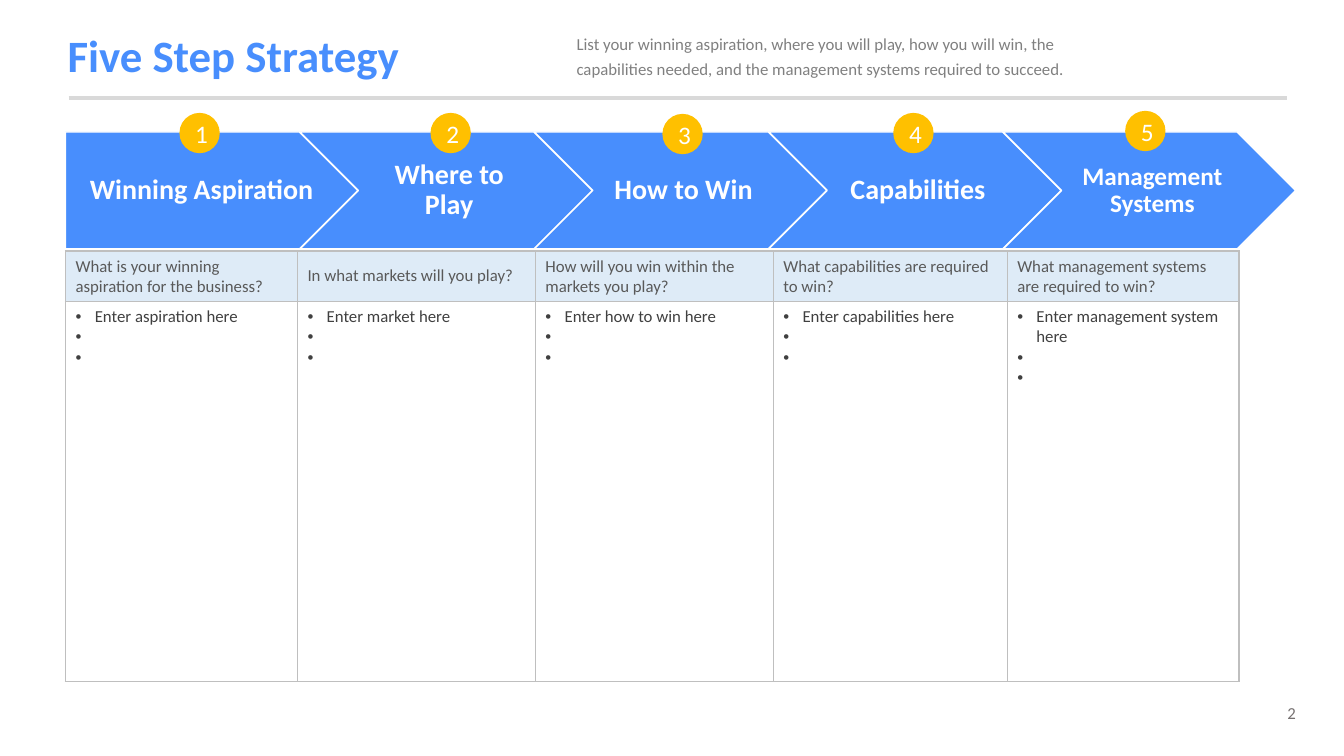
import pptx
import pptx.util
import pptx.dml.color
import pptx.enum.shapes
import pptx.enum.text
import pptx.oxml
import pptx.oxml.ns

Inches = pptx.util.Inches
Pt = pptx.util.Pt
SHAPE = pptx.enum.shapes.MSO_SHAPE
ALIGN = pptx.enum.text.PP_ALIGN
ANCHOR = pptx.enum.text.MSO_ANCHOR

COLORS = {
    "blue": "488EFD", "gold": "FFC000", "white": "FFFFFF", "pale": "DEEBF7",
    "rule": "D9D9D9", "border": "BFBFBF", "hint": "808080",
    "question": "595959", "entry": "404040", "number": "767171",
}
FONT = "Calibri"

# Grid of the five steps, in inches
LEFT = 0.65
STEP_PITCH, STEP_TOP, STEP_WIDTH, STEP_HEIGHT = 2.325, 1.31, 2.9, 1.16
BADGE_SIZE = 0.4
TABLE_TOP = 2.49
COLUMN_WIDTHS = [2.3, 2.36, 2.36, 2.32, 2.3]
ROW_HEIGHTS = [0.5, 3.77]
BULLET_INDENT = 0.19

# Label, label size, badge left and top, question, first entry
STEPS = [
    ("Winning Aspiration", 20, 1.78, 1.12,
     "What is your winning aspiration for the business?", "Enter aspiration here"),
    ("Where to Play", 20, 4.27, 1.12,
     "In what markets will you play?", "Enter market here"),
    ("How to Win", 20, 6.57, 1.13,
     "How will you win within the markets you play?", "Enter how to win here"),
    ("Capabilities", 20, 8.86, 1.12,
     "What capabilities are required to win?", "Enter capabilities here"),
    ("Management Systems", 18, 11.16, 1.1,
     "What management systems are required to win?", "Enter management system here"),
]


def rgb(name):
    return pptx.dml.color.RGBColor.from_string(COLORS[name])


def write(frame, text, size, color, bold=False, align=ALIGN.LEFT, spacing=None):
    frame.text = text
    frame.word_wrap = True
    for para in frame.paragraphs:
        para.alignment = align
        if spacing:
            para.line_spacing = spacing
        for span in para.runs:
            span.font.name = FONT
            span.font.size = Pt(size)
            span.font.bold = bold
            span.font.color.rgb = rgb(color)


def add_text(page, left, top, width, height, text, color, **style):
    box = page.shapes.add_textbox(*map(Inches, (left, top, width, height)))
    write(box.text_frame, text, 12, color, **style)
    return box


def add_filled(page, kind, left, top, width, height, fill, line=None):
    shape = page.shapes.add_shape(kind, *map(Inches, (left, top, width, height)))
    shape.shadow.inherit = False
    shape.fill.solid()
    shape.fill.fore_color.rgb = rgb(fill)
    if line:
        shape.line.color.rgb = rgb(line)
        shape.line.width = Pt(1)
    else:
        shape.line.fill.background()
    shape.text_frame.vertical_anchor = ANCHOR.MIDDLE
    return shape


def add_title(page, text):
    title = page.shapes.title
    title.left, title.top, title.width, title.height = map(Inches, (0.57, 0.19, 10.94, 0.77))
    write(title.text_frame, text, 32, "blue", bold=True, spacing=0.9)
    title.text_frame.vertical_anchor = ANCHOR.MIDDLE


def add_rule(page, left, right, top):
    rule = page.shapes.add_connector(
        pptx.enum.shapes.MSO_CONNECTOR.STRAIGHT, *map(Inches, (left, top, right, top)))
    rule.line.color.rgb = rgb("rule")
    rule.line.width = Pt(3)
    rule._element.spPr.append(pptx.oxml.parse_xml(
        f'<a:effectLst {pptx.oxml.ns.nsdecls("a")}/>'))


def add_step(page, index, label, size):
    kind = SHAPE.CHEVRON if index else SHAPE.PENTAGON
    arrow = add_filled(page, kind, LEFT + index * STEP_PITCH, STEP_TOP,
                       STEP_WIDTH, STEP_HEIGHT, "blue", "white")
    frame = arrow.text_frame
    frame.margin_left = Inches(0.09 if index else 0.12)
    frame.margin_right = Inches(0.03)
    frame.margin_top = frame.margin_bottom = Inches(0.06)
    write(frame, label, size, "white", bold=True, align=ALIGN.CENTER, spacing=0.9)


def add_badge(page, left, top, number):
    badge = add_filled(page, SHAPE.OVAL, left, top, BADGE_SIZE, BADGE_SIZE, "gold")
    write(badge.text_frame, str(number), 18, "white", align=ALIGN.CENTER)


def style_cell(cell, fill):
    cell.fill.solid()
    cell.fill.fore_color.rgb = rgb(fill)
    properties = cell._tc.get_or_add_tcPr()
    for position, side in enumerate("LRTB"):
        properties.insert(position, pptx.oxml.parse_xml(
            f'<a:ln{side} {pptx.oxml.ns.nsdecls("a")} w="{Pt(1)}"><a:solidFill>'
            f'<a:srgbClr val="{COLORS["border"]}"/></a:solidFill></a:ln{side}>'))


def add_bullets(frame):
    for para in frame.paragraphs:
        properties = para._p.get_or_add_pPr()
        properties.set("marL", str(Inches(BULLET_INDENT)))
        properties.set("indent", str(-Inches(BULLET_INDENT)))
        for tag in ('buFont typeface="Arial"', 'buChar char="•"'):
            properties.append(pptx.oxml.parse_xml(
                f'<a:{tag} {pptx.oxml.ns.nsdecls("a")}/>'))


def add_answer_table(page):
    table = page.shapes.add_table(
        len(ROW_HEIGHTS), len(COLUMN_WIDTHS), Inches(LEFT), Inches(TABLE_TOP),
        Inches(sum(COLUMN_WIDTHS)), Inches(sum(ROW_HEIGHTS))).table
    for row, height in zip(table.rows, ROW_HEIGHTS):
        row.height = Inches(height)
    for index, (width, step) in enumerate(zip(COLUMN_WIDTHS, STEPS)):
        table.columns[index].width = Inches(width)
        question, entry = step[4:]
        header, body = table.cell(0, index), table.cell(1, index)
        style_cell(header, "pale")
        header.vertical_anchor = ANCHOR.MIDDLE
        write(header.text_frame, question, 12, "question")
        style_cell(body, "white")
        # A single space keeps the two unfilled bullets visible
        write(body.text_frame, "\n".join([entry, " ", " "]), 12, "entry")
        add_bullets(body.text_frame)


def main():
    deck = pptx.Presentation()
    deck.slide_width, deck.slide_height = Inches(13.33), Inches(7.5)
    page = deck.slides.add_slide(deck.slide_layouts[5])

    # Heading
    add_title(page, "Five Step Strategy")
    add_rule(page, 0.68, 12.76, 0.97)
    hint = add_text(
        page, 5.62, 0.25, 5.63, 0.77,
        "List your winning aspiration, where you will play, how you will win, the "
        "capabilities needed, and the management systems required to succeed.",
        "hint", spacing=1.2)
    hint.text_frame.paragraphs[0].space_before = Pt(10)

    # Arrows, answers, then the numbers on top
    for index, (label, size, *_) in enumerate(STEPS):
        add_step(page, index, label, size)
    add_answer_table(page)
    for number, step in enumerate(STEPS, start=1):
        add_badge(page, step[2], step[3], number)

    # Page number
    add_text(page, 11.93, 6.92, 1.02, 0.3, "2", "number", align=ALIGN.RIGHT)
    deck.save("out.pptx")


if __name__ == "__main__":
    main()
